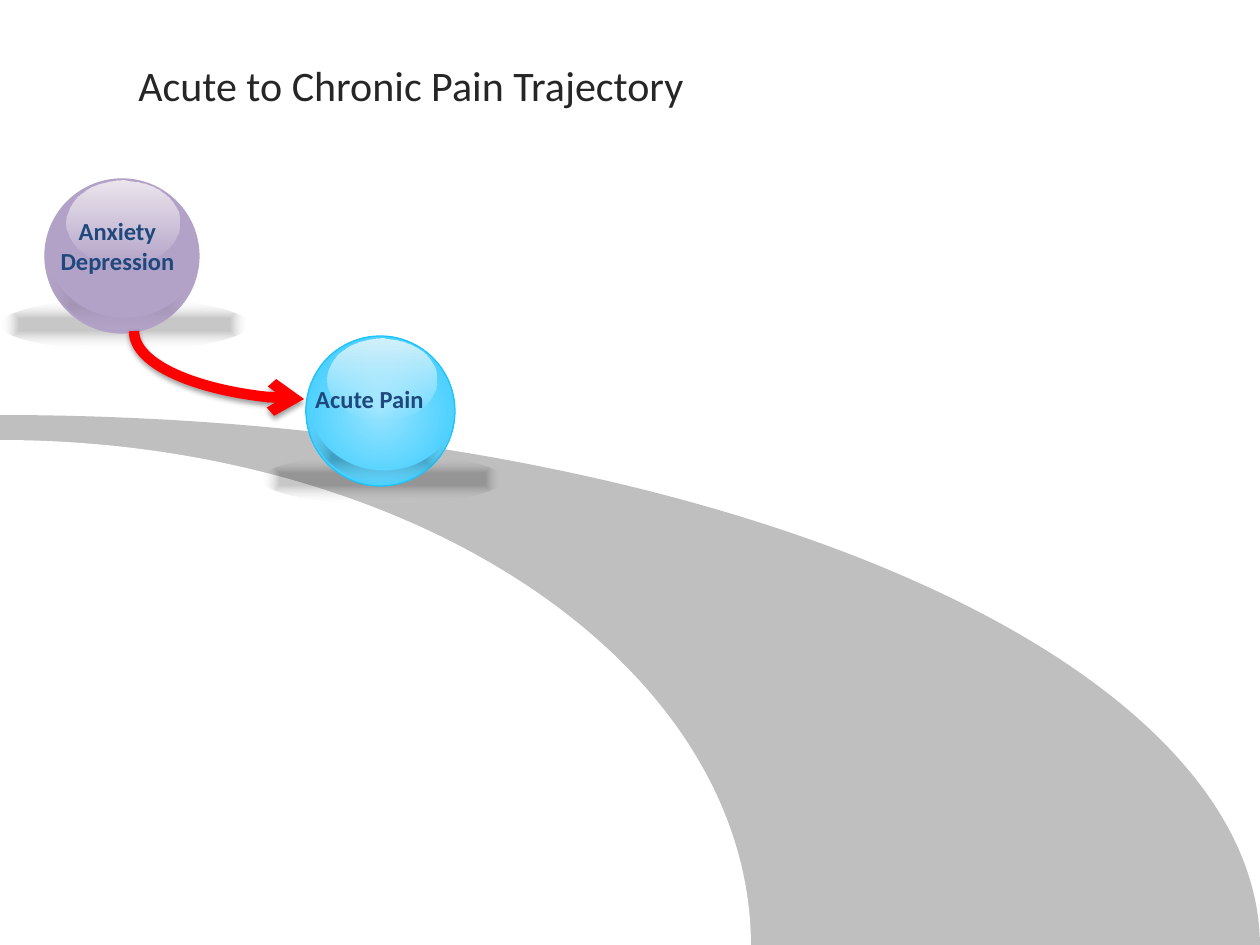
from pptx import Presentation
from pptx.dml.color import RGBColor
from pptx.enum.shapes import MSO_CONNECTOR, MSO_SHAPE
from pptx.enum.text import MSO_AUTO_SIZE, PP_ALIGN
from pptx.oxml import parse_xml
from pptx.oxml.ns import nsdecls, qn
from pptx.util import Emu, Pt

ARC, OVAL, MOON = MSO_SHAPE.ARC, MSO_SHAPE.OVAL, MSO_SHAPE.MOON
LEFT, CENTER = PP_ALIGN.LEFT, PP_ALIGN.CENTER
PX = 914400 / 126

WHITE = RGBColor(0xFF, 0xFF, 0xFF)
BLACK = RGBColor(0x00, 0x00, 0x00)
CREAM = RGBColor(0xFF, 0xFC, 0xF9)
ROAD_GRAY = RGBColor(0xBF, 0xBF, 0xBF)
PALE_BLUE = RGBColor(0x97, 0xE4, 0xFF)
BLUE = RGBColor(0x1D, 0xC4, 0xFF)
PURPLE = RGBColor(0xB3, 0xA2, 0xC7)
NAVY = RGBColor(0x1F, 0x49, 0x7D)
RED = RGBColor(0xFF, 0x00, 0x00)
INK = RGBColor(0x26, 0x26, 0x26)

CENTERED = '<a:path path="{}"><a:fillToRect l="50000" t="50000" r="50000" b="50000"/></a:path>'
FROM_EDGES = CENTERED.format("shape")
RADIAL = CENTERED.format("circle")
UPWARD = '<a:lin ang="16200000" scaled="0"/>'


def add_filled(shapes, kind, box, stops, direction="", rotation=0):
    shape = shapes.add_shape(kind, *[Emu(round(v * PX)) for v in box])
    shape.shadow.inherit = False
    shape.rotation = rotation
    shape.line.fill.background()
    if len(stops) == 1:
        shape.fill.solid()
        shape.fill.fore_color.rgb = stops[0][1]
        return shape
    shape.fill.background()
    stop_xml = "".join(
        f'<a:gs pos="{pos * 1000}"><a:srgbClr val="{color}">'
        f'<a:alpha val="{alpha * 1000}"/></a:srgbClr></a:gs>'
        for pos, color, alpha in stops)
    gradient = parse_xml(
        f'<a:gradFill {nsdecls("a")} rotWithShape="1">'
        f'<a:gsLst>{stop_xml}</a:gsLst>{direction}</a:gradFill>')
    properties = shape._element.spPr
    properties.replace(properties.find(qn("a:noFill")), gradient)
    return shape


def add_label(shapes, box, lines, size, color, bold, align):
    label = shapes.add_textbox(*[Emu(round(v * PX)) for v in box])
    frame = label.text_frame
    frame.word_wrap = True
    frame.auto_size = MSO_AUTO_SIZE.SHAPE_TO_FIT_TEXT
    for i, line in enumerate(lines):
        paragraph = frame.add_paragraph() if i else frame.paragraphs[0]
        paragraph.alignment = align
        run = paragraph.add_run()
        run.text = line
        run.font.name = "Calibri"
        run.font.size = Pt(size)
        run.font.bold = bold
        run.font.color.rgb = color


prs = Presentation()
prs.slide_width = Emu(round(1260 * PX))
prs.slide_height = Emu(round(945 * PX))
slide = prs.slides.add_slide(prs.slide_layouts[6])

for box, color, angles in (
    ((-1261, 415, 2521, 1063), ROAD_GRAY, (161.98, 0.08)),
    ((-751, 440, 1502, 1012), WHITE, (162.01, 0.07)),
):
    road_edge = add_filled(slide.shapes, ARC, box, [(0, color, 100)])
    road_edge.adjustments[0], road_edge.adjustments[1] = angles

BALLS = (
    (["Acute Pain"], (294, 378, 151, 43), (306, 336, 149, 150),
     [(0, PALE_BLUE, 100), (100, BLUE, 100)], BLUE,
     (262, 455, 241, 49), (328, 339, 108, 81), (345, 377, 66, 145), 24),
    (["Anxiety", "Depression"], (42, 210, 151, 72), (45, 179, 154, 154),
     [(0, PURPLE, 100)], PURPLE,
     (0, 300, 248, 50), (67, 181, 112, 83), (84, 221, 68, 150), 8),
)
for words, words_box, ball_box, ball_fill, rim, shadow_box, gloss_box, shade_box, shade_alpha in BALLS:
    parts = slide.shapes.add_group_shape().shapes
    add_filled(parts, OVAL, shadow_box, [(24, BLACK, 22), (100, WHITE, 0)], FROM_EDGES)
    ball = add_filled(parts, OVAL, ball_box, ball_fill, RADIAL, 350.9)
    ball.line.color.rgb = rim
    ball.line.width = Pt(0.75)
    add_filled(parts, OVAL, gloss_box, [(0, WHITE, 0), (100, CREAM, 77)], UPWARD)
    shade = add_filled(parts, MOON, shade_box,
                       [(24, BLACK, shade_alpha), (100, WHITE, 0)], FROM_EDGES, 275.9)
    shade.adjustments[0] = 0.19
    add_label(slide.shapes, words_box, words, 14, NAVY, True, CENTER)

path_to_pain = slide.shapes.add_connector(
    MSO_CONNECTOR.CURVE, *[Emu(round(v * PX)) for v in (185, 280, 253, 450)])
path_to_pain.line.color.rgb = RED
path_to_pain.line.width = Pt(6)
curve = path_to_pain._element.spPr
curve.find(qn("a:prstGeom")).set("prst", "curvedConnector2")
curve.xfrm.set("rot", "16200000")
curve.xfrm.set("flipH", "1")
curve.find(qn("a:ln")).append(parse_xml(f'<a:tailEnd {nsdecls("a")} type="arrow"/>'))
curve.append(parse_xml(
    f'<a:effectLst {nsdecls("a")}><a:outerShdw blurRad="40000" dist="20000" dir="5400000" '
    f'rotWithShape="0"><a:srgbClr val="{BLACK}"><a:alpha val="38000"/></a:srgbClr>'
    '</a:outerShdw></a:effectLst>'))

add_label(slide.shapes, (126, 53, 935, 63), ["Acute to Chronic Pain Trajectory"],
          24, INK, False, LEFT)

prs.save("out.pptx")
